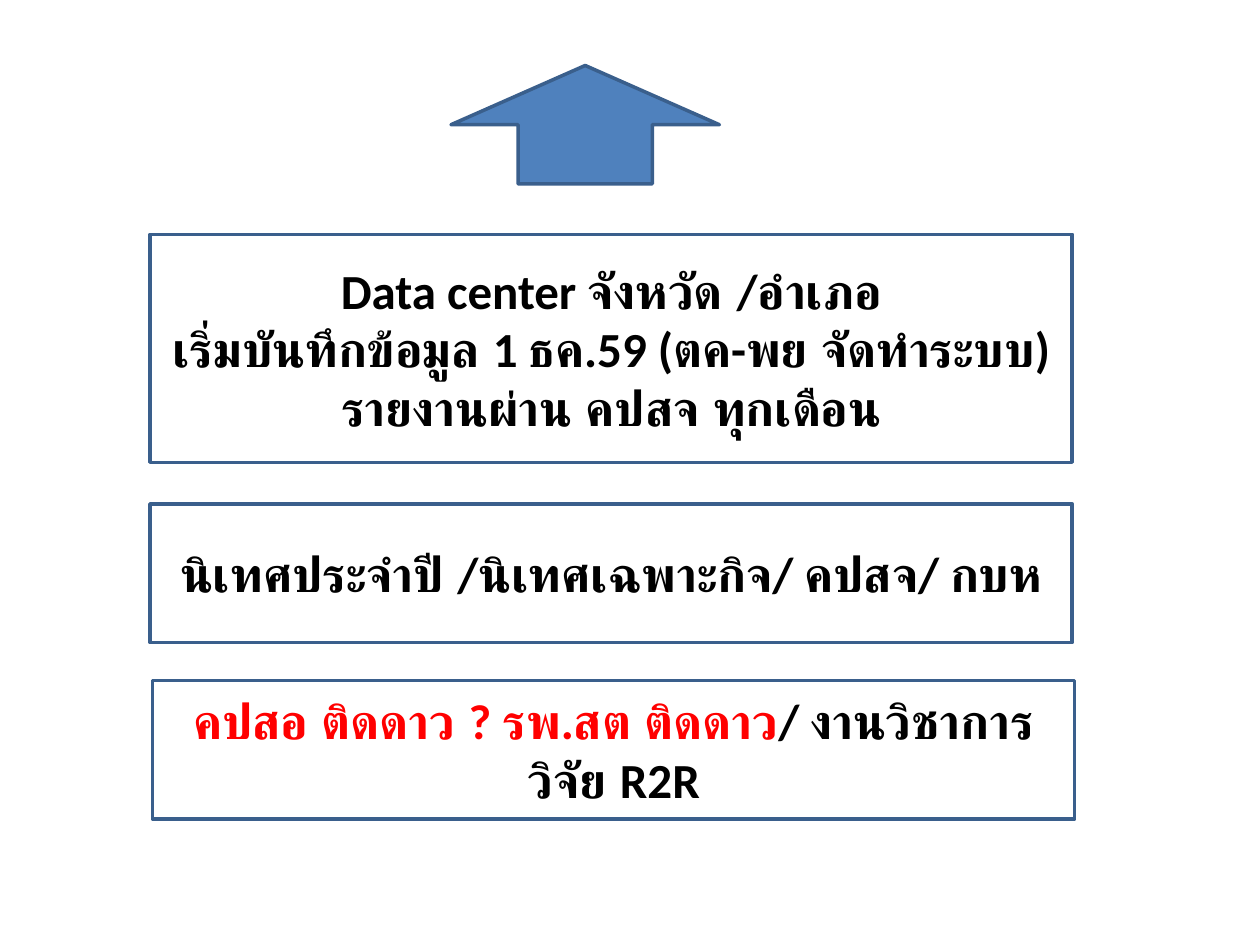
from pptx import Presentation
from pptx.dml.color import RGBColor as RGB
from pptx.enum.shapes import MSO_SHAPE as Shape
from pptx.enum.text import MSO_ANCHOR as Anchor, PP_ALIGN as Align
from pptx.util import Inches, Pt

COLORS = {"line": "3A5F8C", "arrow": "4F81BD", "text": "000000", "alert": "FF0000"}
FONT = "Calibri"

BOXES = [
    ((1.19, 1.86, 7.32, 1.81), [
        [("Data center จังหวัด /อำเภอ", "text")],
        [("เริ่มบันทึกข้อมูล 1 ธค.59 (ตค-พย จัดทำระบบ)", "text")],
        [("รายงานผ่าน คปสจ ทุกเดือน", "text")],
    ]),
    ((1.19, 4, 7.32, 1.1), [
        [("นิเทศประจำปี /นิเทศเฉพาะกิจ/ คปสจ/ กบห", "text")],
    ]),
    ((1.21, 5.4, 7.32, 1.1), [
        [("คปสอ ติดดาว ? รพ.สต ติดดาว", "alert"),
         ("/ งานวิชาการ วิจัย R2R", "text")],
    ]),
]


def color(name):
    return RGB.from_string(COLORS[name])


def add_form(slide, kind, box):
    form = slide.shapes.add_shape(kind, *map(Inches, box))
    form.shadow.inherit = False
    form.line.color.rgb = color("line")
    form.line.width = Pt(2)
    return form


def add_arrow(slide, box):
    arrow = add_form(slide, Shape.UP_ARROW, box)
    arrow.fill.solid()
    arrow.fill.fore_color.rgb = color("arrow")


def add_panel(slide, box, lines):
    panel = add_form(slide, Shape.RECTANGLE, box)
    panel.fill.background()
    frame = panel.text_frame
    frame.word_wrap = True
    frame.vertical_anchor = Anchor.MIDDLE
    for i, line in enumerate(lines):
        para = frame.add_paragraph() if i else frame.paragraphs[0]
        para.alignment = Align.CENTER
        for text, tone in line:
            run = para.add_run()
            run.text = text
            run.font.name = FONT
            run.font.size = Pt(28)
            run.font.bold = True
            run.font.color.rgb = color(tone)


def main():
    deck = Presentation()
    deck.slide_width, deck.slide_height = Inches(10), Inches(7.5)
    slide = deck.slides.add_slide(deck.slide_layouts[6])
    for box, lines in BOXES:
        add_panel(slide, box, lines)
    add_arrow(slide, (3.58, 0.52, 2.13, 0.94))
    deck.save("out.pptx")


if __name__ == "__main__":
    main()
